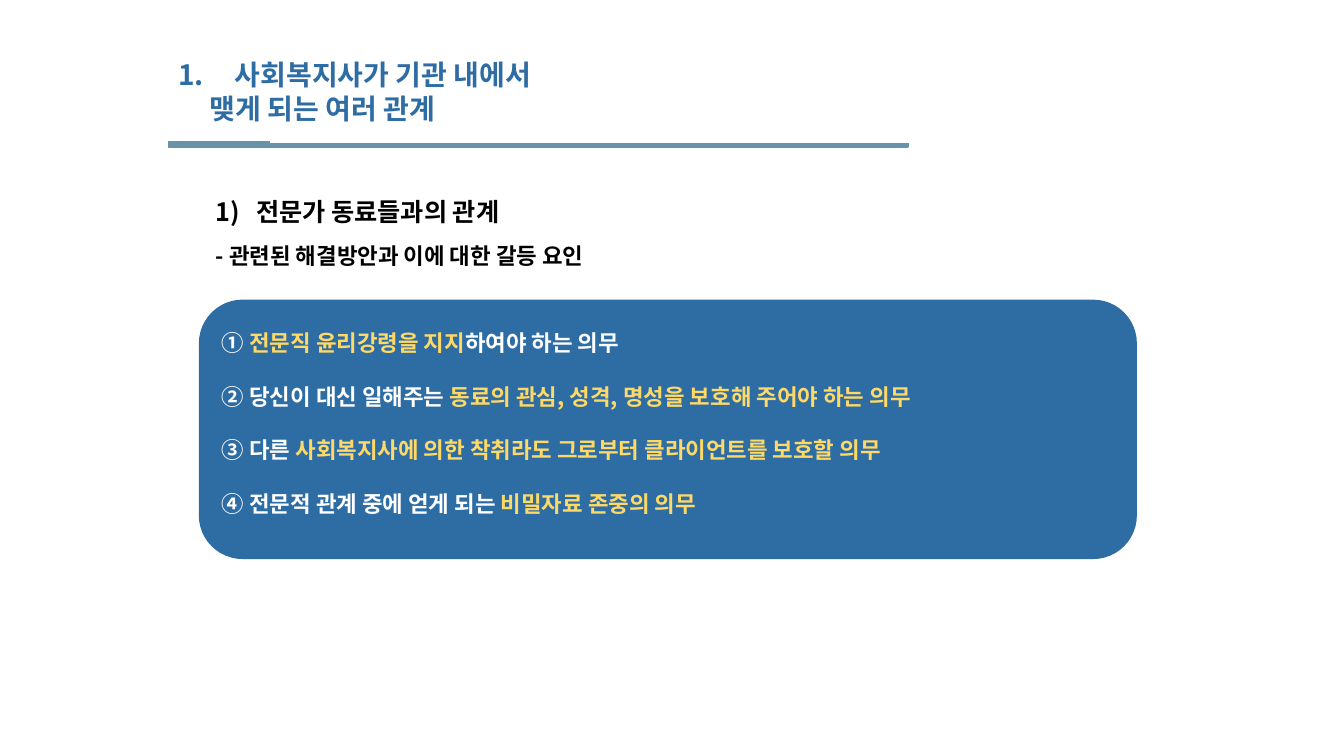
from lxml import etree
from pptx import Presentation
from pptx.dml.color import RGBColor
from pptx.enum.shapes import MSO_CONNECTOR as Connector, MSO_SHAPE as Shape
from pptx.enum.text import MSO_ANCHOR as Anchor, PP_ALIGN as Align
from pptx.oxml.ns import qn
from pptx.util import Pt

FONT = "Noto Sans CJK KR"
COLORS = {"blue": "2E6CA4", "rule": "6793A9", "accent": "FFD966",
          "white": "FFFFFF", "black": "000000"}

# Content: each line is a list of (text, colour) spans
TITLE = ["사회복지사가 기관 내에서", "맺게 되는 여러 관계"]
HEADING = "1)\t전문가 동료들과의 관계"
SUBHEADING = "- 관련된 해결방안과 이에 대한 갈등 요인"
DUTIES = [
    [("① ", "white"), ("전문직 윤리강령을 지지", "accent"), ("하여야 하는 의무", "white")],
    [("② 당신이 대신 일해주는 ", "white"),
     ("동료의 관심, 성격, 명성을 보호해 주어야 하는 의무", "accent")],
    [("③ 다른 ", "white"),
     ("사회복지사에 의한 착취라도 그로부터 클라이언트를 보호할 의무", "accent")],
    [("④ 전문적 관계 중에 얻게 되는 ", "white"), ("비밀자료 존중의 의무", "accent")],
]

# Layout in points: left, top, width, height
TITLE_BOX = (120.24, 36, 290, 55.4)
RULE = (120.24, 101.5, 528.5, 3.6)
TRIM_LEFT = 193
HEADING_BOX = (142.56, 134.64, 669, 65)
PANEL = (142.56, 214.56, 669, 184.3)


def rgb(name):
    return RGBColor.from_string(COLORS[name])


def set_frame(box, left, top):
    frame = box.text_frame
    frame.word_wrap = True
    frame.vertical_anchor = Anchor.TOP
    frame.margin_left, frame.margin_top = Pt(left), Pt(top)
    frame.margin_right = frame.margin_bottom = Pt(0)
    return frame


def add_line(frame, spans, size=16, leading=22, before=0, margin=0, hanging=0, numbered=False):
    """Add one paragraph of coloured spans to the frame."""
    first = frame.paragraphs[0]
    para = frame.add_paragraph() if first.runs else first
    para.alignment = Align.LEFT
    para.line_spacing, para.space_before = Pt(leading), Pt(before)
    props = para._p.get_or_add_pPr()
    props.set("marL", str(Pt(margin)))
    props.set("indent", str(Pt(-hanging)))
    if numbered:
        etree.SubElement(props, qn("a:buFont")).set("typeface", FONT)
        etree.SubElement(props, qn("a:buAutoNum")).set("type", "arabicPeriod")
    for text, color in spans:
        span = para.add_run()
        span.text = text
        span.font.name, span.font.size, span.font.bold = FONT, Pt(size), True
        span.font.color.rgb = rgb(color)
        etree.SubElement(span._r.get_or_add_rPr(), qn("a:ea")).set("typeface", FONT)


def add_block(page, kind, place, color):
    block = page.shapes.add_shape(kind, *map(Pt, place))
    block.shadow.inherit = False
    block.fill.solid()
    block.fill.fore_color.rgb = block.line.color.rgb = rgb(color)
    block.line.width = Pt(1)
    return block


deck = Presentation()
deck.slide_width, deck.slide_height = Pt(960), Pt(540)
page = deck.slides.add_slide(deck.slide_layouts[6])

# Rule under the title, trimmed by a white line on its upper edge
add_block(page, Shape.RECTANGLE, RULE, "rule")
trim = page.shapes.add_connector(Connector.STRAIGHT, Pt(TRIM_LEFT), Pt(RULE[1]),
                                 Pt(RULE[0] + RULE[2] + 1), Pt(RULE[1]))
trim.line.color.rgb = rgb("white")
trim.line.width = Pt(1)
etree.SubElement(trim._element.spPr, qn("a:effectLst"))

# Title
title = set_frame(page.shapes.add_textbox(*map(Pt, TITLE_BOX)), 7.2, 5)
add_line(title, [(TITLE[0], "blue")], size=20, leading=24.3,
         margin=40.3, hanging=40.3, numbered=True)
add_line(title, [(TITLE[1], "blue")], size=20, leading=24.3, margin=22.6)

# Heading and subheading
heading = set_frame(page.shapes.add_textbox(*map(Pt, HEADING_BOX)), 11.7, 5.4)
add_line(heading, [(HEADING, "black")], size=18, margin=28.6, hanging=28.6)
add_line(heading, [(SUBHEADING, "black")], before=8)

# Panel of duties
panel = set_frame(add_block(page, Shape.ROUNDED_RECTANGLE, PANEL, "blue"), 7, 8.5)
for index, duty in enumerate(DUTIES):
    add_line(panel, duty, before=16.5 if index else 0)

deck.save("out.pptx")
